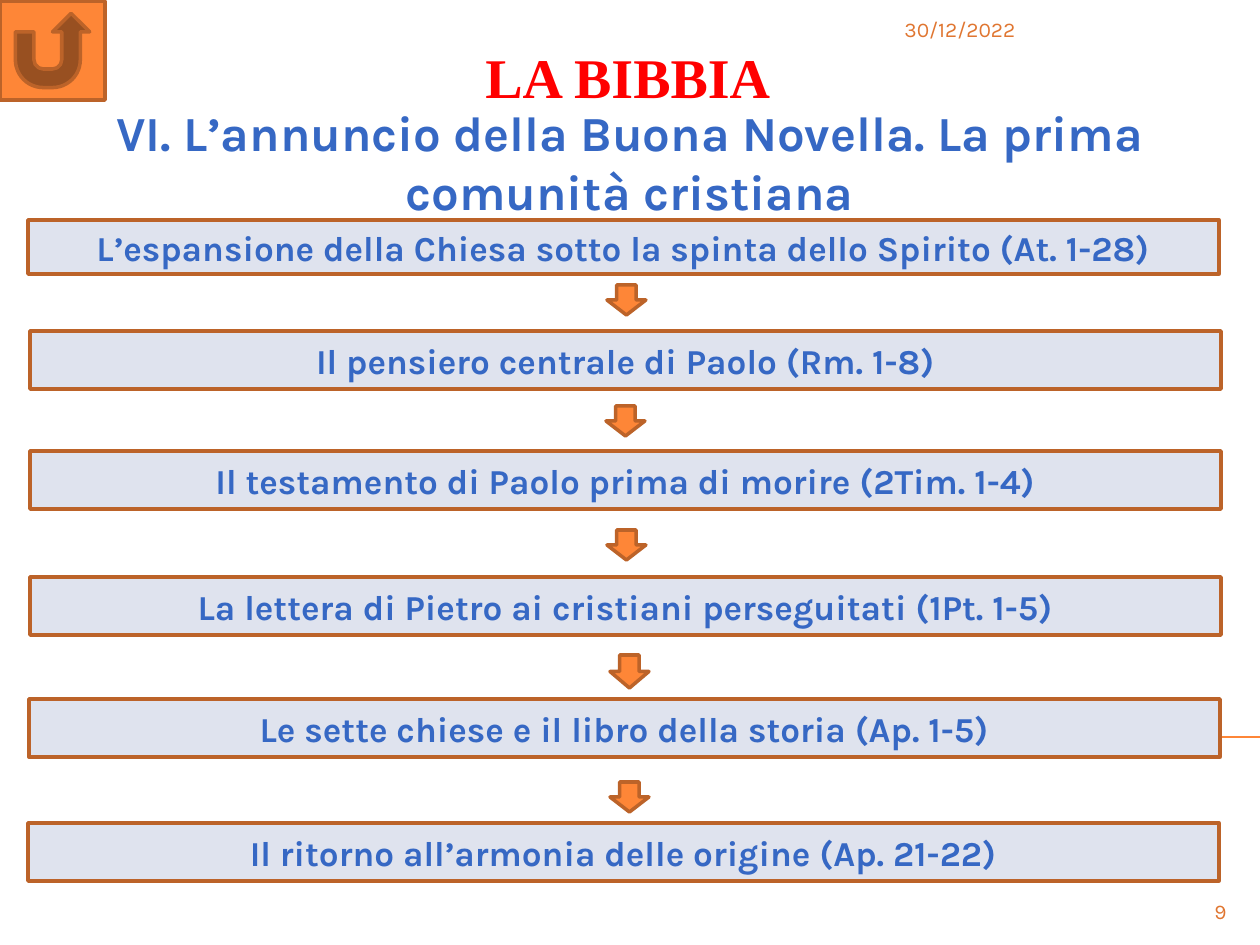
from pptx import Presentation
from pptx.dml.color import RGBColor
from pptx.enum.shapes import MSO_CONNECTOR, MSO_SHAPE
from pptx.enum.text import MSO_ANCHOR, PP_ALIGN
from pptx.oxml.ns import qn
from pptx.util import Pt
from lxml.etree import SubElement

PX = 914400 / 126
ORANGE = RGBColor(0xFE, 0x86, 0x37)
BROWN = RGBColor(0xBC, 0x63, 0x29)
RUST = RGBColor(0xE0, 0x76, 0x31)
BLUE = RGBColor(0x36, 0x68, 0xC4)
PALE = RGBColor(0xDF, 0xE3, 0xEE)
RED = RGBColor(0xFF, 0x00, 0x00)

TITLE = "LA BIBBIA"
SUBTITLE = "VI. L’annuncio della Buona Novella. La prima comunità cristiana"
DATE = "30/12/2022"
PAGE = "9"
STAGES = [
    ("L’espansione della Chiesa sotto la spinta dello Spirito (At. 1-28)", 28, 220, 54),
    ("Il pensiero centrale di Paolo (Rm. 1-8)", 30, 331, 58),
    ("Il testamento di Paolo prima di morire (2Tim. 1-4)", 30, 451, 58),
    ("La lettera di Pietro ai cristiani perseguitati (1Pt. 1-5)", 30, 577, 58),
    ("Le sette chiese e il libro della storia (Ap. 1-5)", 29, 699, 58),
    ("Il ritorno all’armonia delle origine (Ap. 21-22)", 28, 823, 58),
]
STAGE_WIDTH = 1191
ARROWS = [(607, 285, 30), (606, 406, 30), (607, 530, 30), (610, 655, 33), (610, 782, 30)]
ARROW_WIDTH = 39


def emu(*lengths):
    return [round(length * PX) for length in lengths]


def write(holder, words, size, color, align, anchor=MSO_ANCHOR.TOP, bold=False, font="Karla"):
    frame = holder.text_frame
    frame.word_wrap = True
    frame.vertical_anchor = anchor
    paragraph = frame.paragraphs[0]
    paragraph.text = words
    paragraph.alignment = align
    paragraph.font.name = font
    paragraph.font.size = Pt(size)
    paragraph.font.bold = bold
    paragraph.font.color.rgb = color


def add_label(slide, box, *style, **options):
    write(slide.shapes.add_textbox(*emu(*box)), *style, **options)


def add_block(slide, preset, box, fill):
    block = slide.shapes.add_shape(preset, *emu(*box))
    block.shadow.inherit = False
    block.fill.solid()
    block.fill.fore_color.rgb = fill
    block.line.color.rgb = BROWN
    block.line.width = Pt(2)
    return block


def main():
    """Build the slide with the six stages of the early Christian story."""
    deck = Presentation()
    deck.slide_width, deck.slide_height = emu(1260, 945)
    slide = deck.slides.add_slide(deck.slide_layouts[6])

    rule = slide.shapes.add_connector(MSO_CONNECTOR.STRAIGHT, *emu(71, 737, 1260, 737))
    rule.line.color.rgb = ORANGE
    rule.line.width = Pt(0.75)
    SubElement(rule.element.spPr, qn("a:effectLst"))

    add_label(slide, (35, 37, 1186, 79), TITLE, 32, RED, PP_ALIGN.CENTER,
              anchor=MSO_ANCHOR.BOTTOM, bold=True, font="Times New Roman")
    add_label(slide, (892, 10, 347, 40), DATE, 12, RUST, PP_ALIGN.LEFT)
    add_label(slide, (1134, 892, 105, 34), PAGE, 12, RUST, PP_ALIGN.RIGHT)
    add_label(slide, (44, 96, 1171, 131), SUBTITLE, 28, BLUE, PP_ALIGN.CENTER, bold=True)

    for words, left, top, height in STAGES:
        stage = add_block(slide, MSO_SHAPE.RECTANGLE, (left, top, STAGE_WIDTH, height), PALE)
        write(stage, words, 20, BLUE, PP_ALIGN.CENTER, anchor=MSO_ANCHOR.MIDDLE, bold=True)

    add_block(slide, MSO_SHAPE.ACTION_BUTTON_RETURN, (0, 1, 105, 99), ORANGE)
    for left, top, height in ARROWS:
        add_block(slide, MSO_SHAPE.DOWN_ARROW, (left, top, ARROW_WIDTH, height), ORANGE)

    deck.save("out.pptx")


if __name__ == "__main__":
    main()
